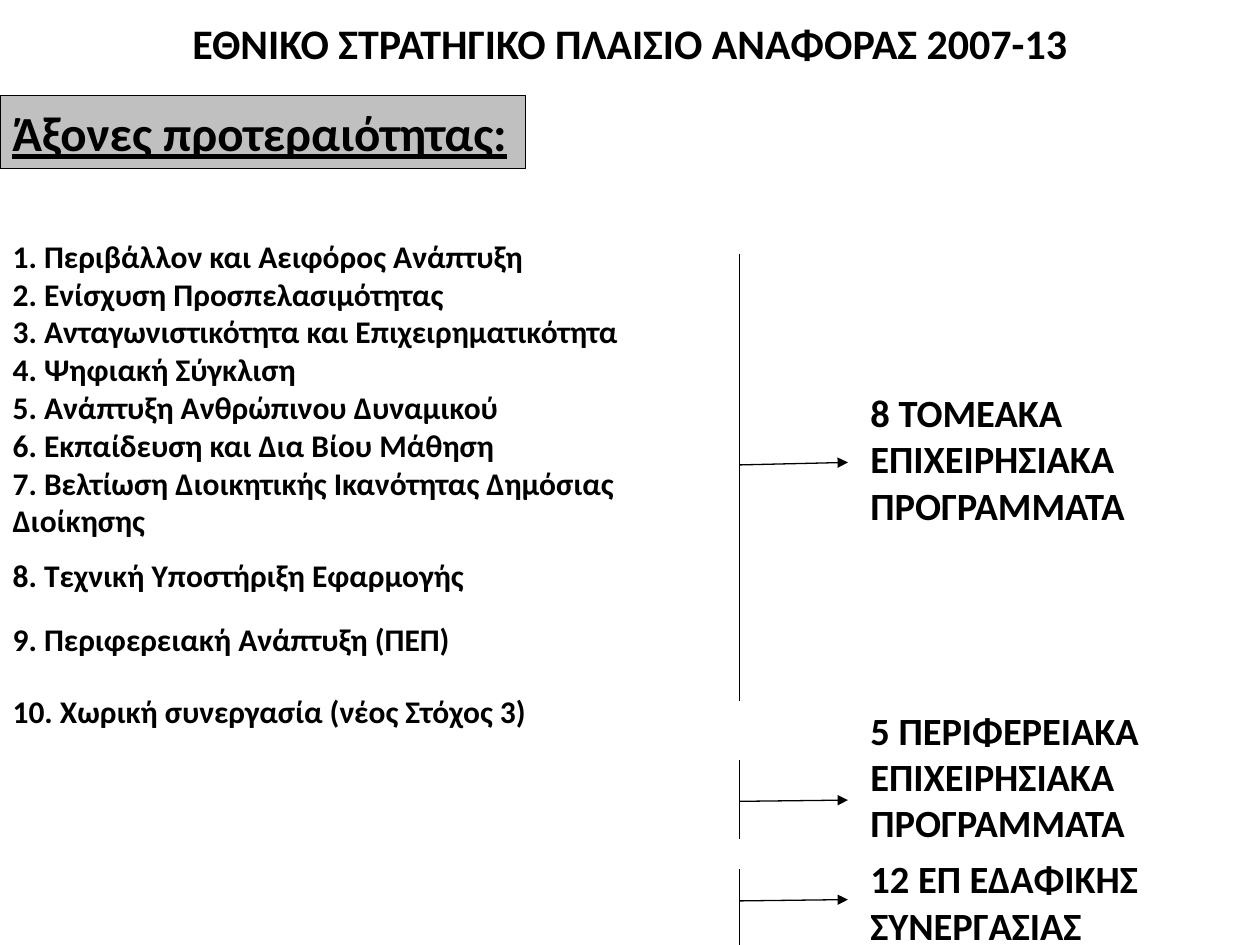
import pptx
import pptx.dml.color
import pptx.enum.shapes
import pptx.enum.text
import pptx.oxml
import pptx.util
from pptx.util import Inches

COLORS = {"ink": "000000", "band": "C0C0C0", "page": "FFFFFF"}
FONT = "Calibri"
STEM = 5.87   # x of the vertical lines
TIP = 6.73    # x of the arrow tips
SIDE = 6.81   # left edge of the labels

# Text and the space before it in points
AXES = [
    ("1. Περιβάλλον και Αειφόρος Ανάπτυξη", 0),
    ("2. Ενίσχυση Προσπελασιμότητας", 0),
    ("3. Ανταγωνιστικότητα και Επιχειρηματικότητα", 0),
    ("4. Ψηφιακή Σύγκλιση", 0),
    ("5. Ανάπτυξη Ανθρώπινου Δυναμικού", 0),
    ("6. Εκπαίδευση και Δια Βίου Μάθηση", 0),
    ("7. Βελτίωση Διοικητικής Ικανότητας Δημόσιας Διοίκησης", 0),
    ("8. Τεχνική Υποστήριξη Εφαρμογής", 9.8),
    ("9. Περιφερειακή Ανάπτυξη (ΠΕΠ)", 14.6),
    ("10. Χωρική συνεργασία (νέος Στόχος 3)", 19.5),
]

# Stem top and end, arrow start and tip, label top and height, label lines
GROUPS = [
    (2.02, 5.56, 3.69, 3.67, 3.04, 1.2,
     ["8 ΤΟΜΕΑΚΑ", "ΕΠΙΧΕΙΡΗΣΙΑΚΑ", "ΠΡΟΓΡΑΜΜΑΤΑ"]),
    (6.03, 6.66, 6.36, 6.35, 5.56, 1.2,
     ["5 ΠΕΡΙΦΕΡΕΙΑΚΑ", "ΕΠΙΧΕΙΡΗΣΙΑΚΑ", "ΠΡΟΓΡΑΜΜΑΤΑ"]),
    (6.9, 7.5, 7.15, 7.14, 6.74, 0.83,
     ["12 ΕΠ ΕΔΑΦΙΚΗΣ ΣΥΝΕΡΓΑΣΙΑΣ"]),
]


def color(name):
    return pptx.dml.color.RGBColor.from_string(COLORS[name])


def place(shape, left, top, width, height):
    shape.left, shape.top = Inches(left), Inches(top)
    shape.width, shape.height = Inches(width), Inches(height)


def write(frame, lines, size, align="LEFT", anchor="TOP", under=None, gaps=None):
    """Fill a text frame with one bold run per paragraph."""
    frame.auto_size = pptx.enum.text.MSO_AUTO_SIZE.NONE
    frame.word_wrap = True
    frame.vertical_anchor = getattr(pptx.enum.text.MSO_ANCHOR, anchor)
    for i, line in enumerate(lines):
        para = frame.paragraphs[0] if i == 0 else frame.add_paragraph()
        para.alignment = getattr(pptx.enum.text.PP_ALIGN, align)
        para.space_before = pptx.util.Pt(gaps[i] if gaps else 0)
        run = para.add_run()
        run.text = line
        font = run.font
        font.name, font.size = FONT, pptx.util.Pt(size)
        font.bold, font.underline = True, under
        font.color.rgb = color("ink")


def add_title(slide):
    title = slide.shapes.title
    place(title, 0.75, 0, 8.5, 0.67)
    write(title.text_frame, ["ΕΘΝΙΚΟ ΣΤΡΑΤΗΓΙΚΟ ΠΛΑΙΣΙΟ ΑΝΑΦΟΡΑΣ 2007-13"],
          24, "CENTER", "MIDDLE")


def add_band(slide):
    band = slide.shapes.add_shape(
        pptx.enum.shapes.MSO_SHAPE.RECTANGLE,
        Inches(0), Inches(0.76), Inches(4.17), Inches(0.58))
    band.shadow.inherit = False
    band.fill.solid()
    band.fill.fore_color.rgb = color("band")
    band.line.color.rgb = color("ink")
    band.line.width = pptx.util.Pt(0.75)
    write(band.text_frame, ["Άξονες προτεραιότητας:"], 28,
          anchor="MIDDLE", under=True)
    band.text_frame.word_wrap = False


def add_list(slide):
    body = slide.placeholders[1]
    place(body, 0, 1.83, 5.96, 5.49)
    lines, gaps = zip(*AXES)
    write(body.text_frame, lines, 18, gaps=gaps)
    for para in body.text_frame.paragraphs:
        props = para._p.get_or_add_pPr()
        props.set("marL", "0")
        props.set("indent", "0")
        props.append(pptx.oxml.parse_xml(
            f'<a:buNone {pptx.oxml.ns.nsdecls("a")}/>'))


def add_line(slide, x1, y1, x2, y2, arrow=False):
    line = slide.shapes.add_connector(
        pptx.enum.shapes.MSO_CONNECTOR.STRAIGHT,
        Inches(x1), Inches(y1), Inches(x2), Inches(y2))
    line.line.color.rgb = color("ink")
    line.line.width = pptx.util.Pt(0.75)
    names = pptx.oxml.ns.nsdecls("a")
    if arrow:
        line.line._get_or_add_ln().append(pptx.oxml.parse_xml(
            f'<a:tailEnd {names} type="triangle"/>'))
    line._element.spPr.append(pptx.oxml.parse_xml(f"<a:effectLst {names}/>"))


def add_group(slide, top, end, start, tip, label, height, lines):
    """Draw a stem, its arrow and the label that the arrow points to."""
    add_line(slide, STEM, top, STEM, end)
    add_line(slide, STEM, start, TIP, tip, arrow=True)
    box = slide.shapes.add_textbox(
        Inches(SIDE), Inches(label), Inches(10 - SIDE), Inches(height))
    write(box.text_frame, lines, 22)


def main():
    deck = pptx.Presentation()
    deck.slide_width, deck.slide_height = Inches(10), Inches(7.5)
    slide = deck.slides.add_slide(deck.slide_layouts[1])
    slide.background.fill.solid()
    slide.background.fill.fore_color.rgb = color("page")
    add_title(slide)
    add_band(slide)
    add_list(slide)
    for group in GROUPS:
        add_group(slide, *group)
    deck.save("out.pptx")


if __name__ == "__main__":
    main()
